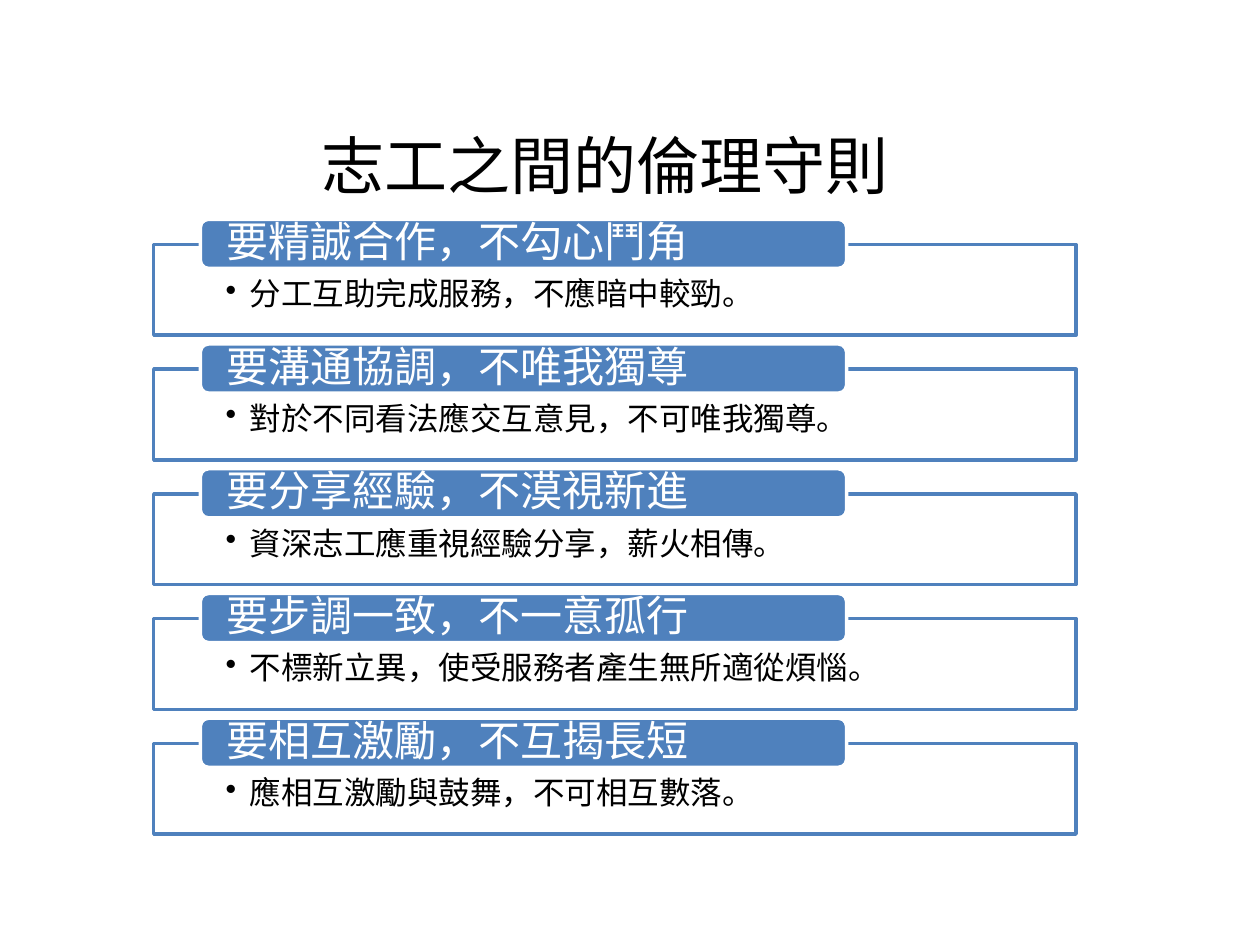
"""Build a slide of five ethics rules for volunteers, each a heading over an outlined box."""
from lxml import etree
from pptx import Presentation
from pptx.dml.color import RGBColor
from pptx.enum.shapes import MSO_SHAPE
from pptx.enum.text import MSO_ANCHOR, PP_ALIGN
from pptx.oxml.ns import qn
from pptx.util import Inches, Pt

RECTANGLE, ROUNDED = MSO_SHAPE.RECTANGLE, MSO_SHAPE.ROUNDED_RECTANGLE
TOP, MIDDLE = MSO_ANCHOR.TOP, MSO_ANCHOR.MIDDLE
LEFT, CENTER = PP_ALIGN.LEFT, PP_ALIGN.CENTER

COLORS = {"white": "FFFFFF", "black": "000000", "blue": "4F81BD"}
TITLE = "志工之間的倫理守則"
RULES = [
    ("要精誠合作，不勾心鬥角", "分工互助完成服務，不應暗中較勁。"),
    ("要溝通協調，不唯我獨尊", "對於不同看法應交互意見，不可唯我獨尊。"),
    ("要分享經驗，不漠視新進", "資深志工應重視經驗分享，薪火相傳。"),
    ("要步調一致，不一意孤行", "不標新立異，使受服務者產生無所適從煩惱。"),
    ("要相互激勵，不互揭長短", "應相互激勵與鼓舞，不可相互數落。"),
]
FIRST_TOP, PITCH, HEADING_RISE = 1.94, 0.99, 0.2


class RuleSlide:
    """Hold the style and the current slide, and draw each kind of element."""

    title_font = "Calibri"
    body_font = "Noto Sans CJK SC"

    def __init__(self, deck):
        """Add a title-only slide to the deck."""
        self.page = deck.slides.add_slide(deck.slide_layouts[5])

    def color(self, name):
        """Return the named colour."""
        return RGBColor.from_string(COLORS[name])

    def format_text(self, para, font, size, color, align):
        """Align a paragraph and format its runs."""
        para.alignment = align
        for span in para.runs:
            span.font.size = Pt(size)
            span.font.color.rgb = self.color(color)
            span.font.name = font
            if font == self.body_font:
                east_asian = etree.SubElement(span._r.get_or_add_rPr(), qn("a:ea"))
                east_asian.set("typeface", font)

    def title(self, text):
        """Fill and place the title placeholder."""
        box = self.page.shapes.title
        box.left, box.top = Inches(0.43), Inches(0.68)
        box.width, box.height = Inches(8.74), Inches(1.25)
        box.text_frame.text = text
        box.text_frame.vertical_anchor = MIDDLE
        self.format_text(box.text_frame.paragraphs[0], self.title_font, 36, "black", CENTER)

    def panel(self, kind, place, fill, line, text, insets, anchor):
        """Draw a filled, outlined shape with text and return it with its paragraph."""
        box = self.page.shapes.add_shape(kind, *map(Inches, place))
        box.shadow.inherit = False
        box.fill.solid()
        box.fill.fore_color.rgb = self.color(fill)
        box.line.color.rgb = self.color(line)
        box.line.width = Pt(2)
        frame = box.text_frame
        frame.word_wrap = True
        frame.vertical_anchor = anchor
        side, frame.margin_top, frame.margin_bottom = map(Inches, insets)
        frame.margin_left = frame.margin_right = side
        frame.text = text
        para = frame.paragraphs[0]
        para.line_spacing = 0.9
        return box, para

    def detail(self, top, text):
        """Draw the outlined box with its bulleted explanation."""
        box, para = self.panel(RECTANGLE, (1.22, top, 7.32, 0.72), "white", "blue",
                               text, (0.57, 0.27, 0.14), TOP)
        fill_color = box.fill._xPr.find(qn("a:solidFill"))[0]
        etree.SubElement(fill_color, qn("a:alpha")).set("val", "90000")
        para.level = 1
        properties = para._p.get_or_add_pPr()
        properties.set("marL", str(Inches(0.19)))
        properties.set("indent", str(-Inches(0.19)))
        etree.SubElement(properties, qn("a:buChar")).set("char", "•")
        self.format_text(para, self.body_font, 18, "black", LEFT)

    def heading(self, top, text):
        """Draw the rounded heading bar."""
        para = self.panel(ROUNDED, (1.59, top, 5.13, 0.39), "blue", "white",
                          text, (0.19, 0, 0), MIDDLE)[1]
        self.format_text(para, self.body_font, 24, "white", LEFT)


def main():
    """Build and save the deck."""
    deck = Presentation()
    deck.slide_width, deck.slide_height = Inches(10), Inches(7.5)
    slide = RuleSlide(deck)
    slide.title(TITLE)
    for index, (heading, detail) in enumerate(RULES):
        top = FIRST_TOP + index * PITCH
        slide.detail(top, detail)
        slide.heading(top - HEADING_RISE, heading)
    deck.save("out.pptx")


if __name__ == "__main__":
    main()
